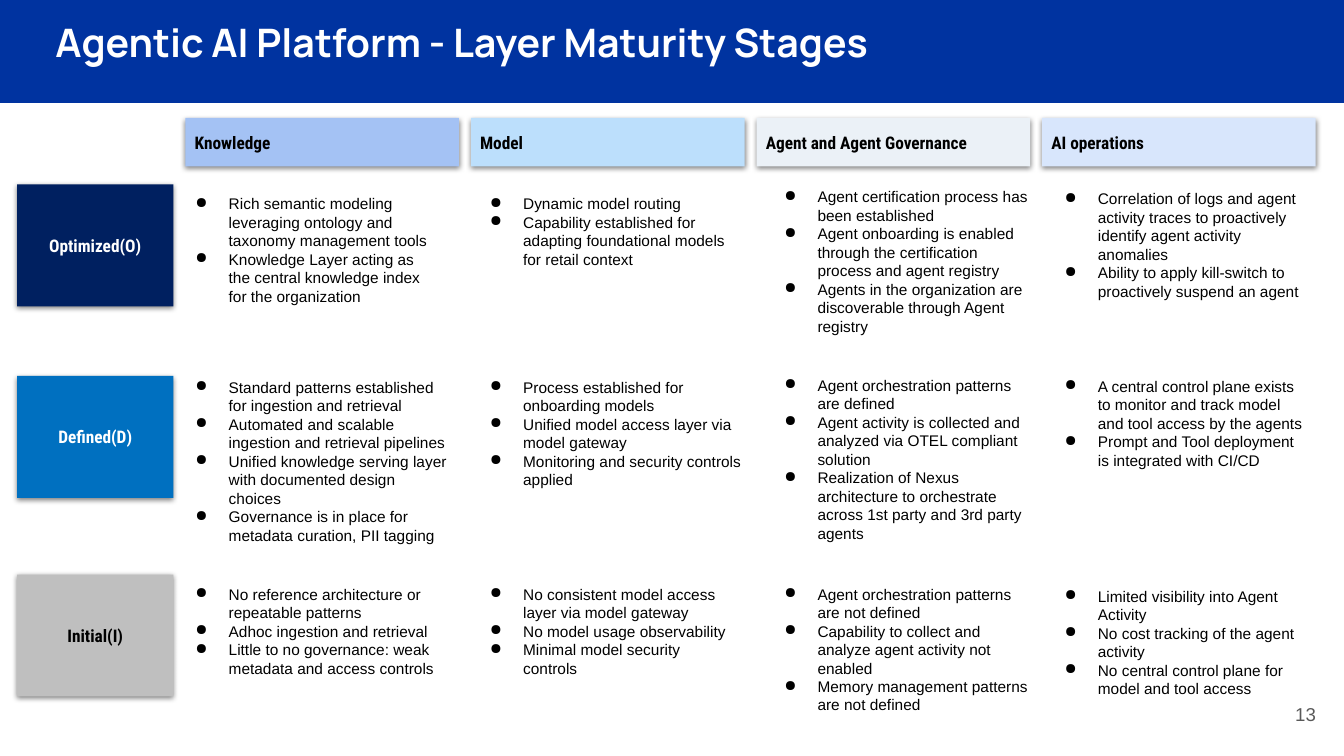
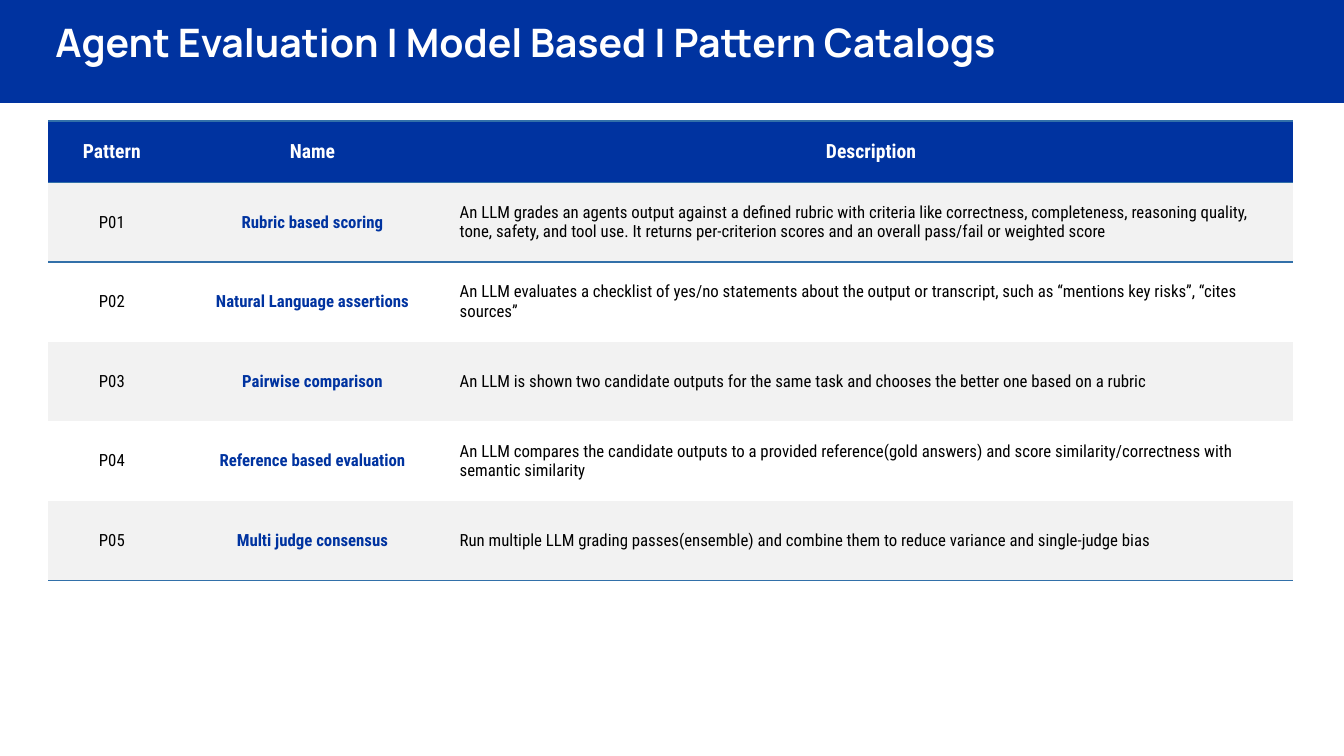
from dataclasses import dataclass
from lxml import etree
from pptx import Presentation, util as u
from pptx.dml.color import RGBColor
from pptx.enum import shapes, text as t
from pptx.oxml import ns


@dataclass(frozen=True)
class Theme:
    blue: str = "0033A0"
    white: str = "FFFFFF"
    black: str = "000000"
    grey: str = "595959"
    stripe: str = "F2F2F2"
    rule: str = "3270A9"
    heads: tuple = ("A4C2F4", "BCDFFC", "EBF1F7", "D8E6FC")
    title_font: str = "Manrope"
    label_font: str = "Roboto Condensed"
    body_font: str = "Arial"
    title: float = 28
    table_head: float = 14
    page: float = 13.3
    label: float = 12.4
    cell: float = 12
    body: float = 11


TH = Theme()
WIDE, HIGH = 13.33, 7.5
LEFT, MID, RIGHT = t.PP_ALIGN.LEFT, t.PP_ALIGN.CENTER, t.PP_ALIGN.RIGHT
TOP, CENTER = t.MSO_ANCHOR.TOP, t.MSO_ANCHOR.MIDDLE

STAGES = [  # name, fill, text colour, top
    ("Optimized(O)", "002060", TH.white, 1.83),
    ("Defined(D)", "0070C0", TH.white, 3.73),
    ("Initial(I)", "BFBFBF", TH.black, 5.7),
]

LAYERS = [  # name, left of lists, tops of lists, widths of lists, lists
    ("Knowledge", 1.67, (1.83, 3.65, 5.7), (2.79, 2.88, 2.79), [
        ["Rich semantic modeling leveraging ontology and taxonomy management tools",
         "Knowledge Layer acting as the central knowledge index for the organization"],
        ["Standard patterns established for ingestion and retrieval",
         "Automated and scalable ingestion and retrieval pipelines",
         "Unified knowledge serving layer with documented design choices",
         "Governance is in place for metadata curation, PII tagging"],
        ["No reference architecture or repeatable patterns",
         "Adhoc ingestion and retrieval",
         "Little to no governance: weak metadata and access controls"]]),
    ("Model", 4.59, (1.83, 3.65, 5.7), (2.79, 2.88, 2.79), [
        ["Dynamic model routing",
         "Capability established for adapting foundational models for retail context"],
        ["Process established for onboarding models",
         "Unified model access layer via model gateway",
         "Monitoring and security controls applied"],
        ["No consistent model access layer via model gateway",
         "No model usage observability",
         "Minimal model security controls"]]),
    ("Agent and Agent Governance", 7.51, (1.76, 3.63, 5.7), (2.79,) * 3, [
        ["Agent certification process has been established",
         "Agent onboarding is enabled through the certification process and agent registry",
         "Agents in the organization are discoverable through Agent registry"],
        ["Agent orchestration patterns are defined",
         "Agent activity is collected and analyzed via OTEL compliant solution",
         "Realization of Nexus architecture to orchestrate across 1st party and 3rd party agents"],
        ["Agent orchestration patterns are not defined",
         "Capability to collect and analyze agent activity not enabled",
         "Memory management patterns are not defined"]]),
    ("AI operations", 10.29, (1.78, 3.64, 5.72), (2.79,) * 3, [
        ["Correlation of logs and agent activity traces to proactively identify agent activity anomalies",
         "Ability to apply kill-switch to proactively suspend an agent"],
        ["A central control plane exists to monitor and track model and tool access by the agents",
         "Prompt and Tool deployment is integrated with CI/CD"],
        ["Limited visibility into Agent Activity",
         "No cost tracking of the agent activity",
         "No central control plane for model and tool access"]]),
]

PATTERNS = [
    ("Pattern", "Name", "Description"),
    ("P01", "Rubric based scoring",
     "An LLM grades an agents output against a defined rubric with criteria like correctness, "
     "completeness, reasoning quality, tone, safety, and tool use. It returns per-criterion "
     "scores and an overall pass/fail or weighted score"),
    ("P02", "Natural Language assertions",
     "An LLM evaluates a checklist of yes/no statements about the output or transcript, "
     "such as “mentions key risks”, “cites sources”"),
    ("P03", "Pairwise comparison",
     "An LLM is shown two candidate outputs for the same task and chooses the better one "
     "based on a rubric"),
    ("P04", "Reference based evaluation",
     "An LLM compares the candidate outputs to a provided reference(gold answers) and score "
     "similarity/correctness with semantic similarity"),
    ("P05", "Multi judge consensus",
     "Run multiple LLM grading passes(ensemble) and combine them to reduce variance and "
     "single-judge bias"),
]


def rgb(code):
    return RGBColor.from_string(code)


def place(box):
    return [u.Inches(n) for n in box]


def node(root, tag, **attrs):
    kid = etree.SubElement(root, ns.qn(tag))
    for key, val in attrs.items():
        kid.set(key, str(val))
    return kid


def write(frame, lines, size=TH.body, font=TH.body_font, color=TH.black, bold=False,
          align=LEFT, dots=False):
    for i, line in enumerate([lines] if isinstance(lines, str) else lines):
        para = frame.add_paragraph() if i else frame.paragraphs[0]
        para.alignment = align
        if dots:
            props = para._p.get_or_add_pPr()
            props.set("marL", str(u.Inches(0.5)))
            props.set("indent", str(u.Inches(-0.33)))
            node(node(props, "a:buClr"), "a:srgbClr", val=color)
            node(props, "a:buChar", char="●")
        run = para.add_run()
        run.text = line
        run.font.size, run.font.name, run.font.bold = u.Pt(size), font, bold
        run.font.color.rgb = rgb(color)


def setup(frame, side, edge, anchor):
    frame.word_wrap = True
    frame.vertical_anchor = anchor
    frame.margin_left = frame.margin_right = u.Inches(side)
    frame.margin_top = frame.margin_bottom = u.Inches(edge)


def label(slide, box, lines, anchor=TOP, **style):
    frame = slide.shapes.add_textbox(*place(box)).text_frame
    setup(frame, 0.1, 0.1, anchor)
    write(frame, lines, **style)


def block(slide, box, fill):
    shape = slide.shapes.add_shape(shapes.MSO_SHAPE.RECTANGLE, *place(box))
    shape.shadow.inherit = False
    shape.fill.solid()
    shape.fill.fore_color.rgb = rgb(fill)
    shape.line.fill.background()
    return shape


def card(slide, box, fill, words, **style):
    shape = block(slide, box, fill)
    glow = node(shape._element.spPr.find(ns.qn("a:effectLst")), "a:outerShdw",
                blurRad=u.Pt(4), dist=u.Pt(1.3), dir=5400000, algn="t", rotWithShape=0)
    node(node(glow, "a:srgbClr", val=TH.black), "a:alpha", val=50000)
    setup(shape.text_frame, 0.09, 0.04, CENTER)
    write(shape.text_frame, words, size=TH.label, font=TH.label_font, bold=True, **style)


def start(deck, title):
    """Blank slide with the blue band and its title."""
    slide = deck.slides.add_slide(deck.slide_layouts[6])
    block(slide, (0, 0, WIDE, 1.02), TH.blue)
    label(slide, (0.45, 0.08, 12.42, 0.83), title, size=TH.title,
          font=TH.title_font, color=TH.white, bold=True)
    return slide


def heads(slide, box, gap=0.12):
    x, y, w, h = box
    wide = (w - gap * (len(LAYERS) - 1)) / len(LAYERS)
    for i, (layer, fill) in enumerate(zip(LAYERS, TH.heads)):
        card(slide, (x + i * (wide + gap), y, wide, h), fill, layer[0])


def stages(slide, x, wide, high):
    for name, fill, color, y in STAGES:
        card(slide, (x, y, wide, high), fill, name, color=color, align=MID)


def points(slide, high):
    for _, x, tops, widths, lists in LAYERS:
        for y, wide, lines in zip(tops, widths, lists):
            label(slide, (x, y, wide, high), lines, dots=True)


def border(cell, sides):
    props = cell._tc.get_or_add_tcPr()
    for i, side in enumerate(sides):
        line = etree.Element(ns.qn("a:ln" + side), w=str(u.Pt(1)))
        node(node(line, "a:solidFill"), "a:srgbClr", val=TH.rule)
        props.insert(i, line)


def grid(slide, box, cols, first):
    """Table: a head row of the given height, then equal striped rows."""
    last = len(PATTERNS) - 1
    table = slide.shapes.add_table(last + 1, len(cols), *place(box)).table
    table.first_row = table.horz_banding = False
    style = table._tbl.tblPr.find(ns.qn("a:tableStyleId"))
    style.text = "{2D5ABB26-0587-4C30-8999-92F81FD0307C}"
    for col, wide in zip(table.columns, cols):
        col.width = u.Inches(wide)
    looks = (dict(align=MID), dict(align=MID, color=TH.blue, bold=True), dict())
    for r, words in enumerate(PATTERNS):
        table.rows[r].height = u.Inches((box[3] - first) / last if r else first)
        fill = (TH.stripe if r % 2 else None) if r else TH.blue
        for c, word in enumerate(words):
            cell = table.cell(r, c)
            cell.vertical_anchor = CENTER
            if fill:
                cell.fill.solid()
                cell.fill.fore_color.rgb = rgb(fill)
            else:
                cell.fill.background()
            border(cell, {0: "TB", 1: "T", last: "B"}.get(r, ""))
            look = looks[c] if r else dict(align=MID, color=TH.white, bold=True)
            write(cell.text_frame, word, font=TH.label_font,
                  size=TH.cell if r else TH.table_head, **look)


def main():
    deck = Presentation()
    deck.slide_width, deck.slide_height = u.Inches(WIDE), u.Inches(HIGH)

    # Maturity stages by layer
    slide = start(deck, "Agentic AI Platform - Layer Maturity Stages")
    heads(slide, (1.84, 1.17, 11.21, 0.48))
    stages(slide, 0.17, 1.55, 1.21)
    points(slide, 1.21)
    label(slide, (12.35, 6.8, 0.8, 0.57), "13", anchor=CENTER, size=TH.page,
          color=TH.grey, align=RIGHT)

    # Pattern catalog
    slide = start(deck, "Agent Evaluation | Model Based | Pattern Catalogs")
    grid(slide, (0.48, 1.2, 12.34, 4.56), (1.26, 2.72, 8.36), 0.61)

    deck.save("out.pptx")


if __name__ == "__main__":
    main()
